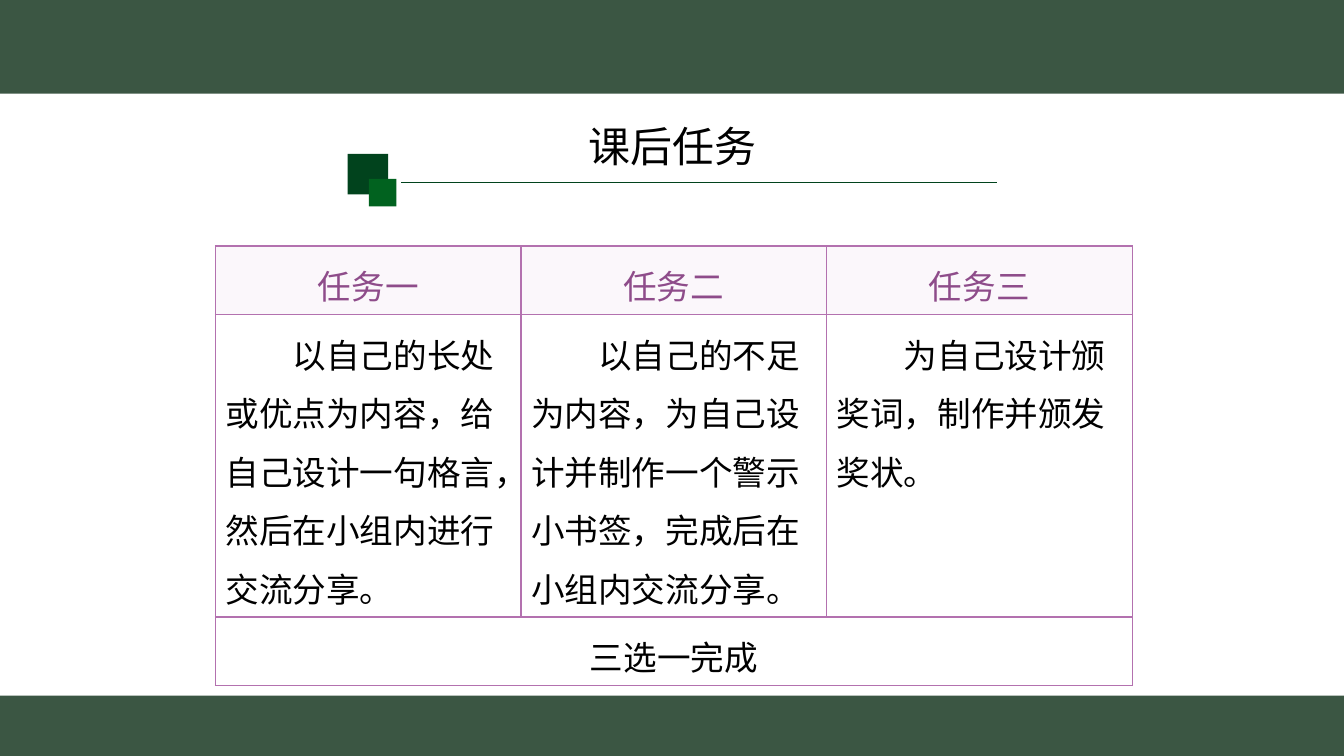
from collections import namedtuple

from lxml import etree
from pptx import Presentation
from pptx import util as u
from pptx.dml.color import RGBColor
from pptx.enum import shapes, text
from pptx.oxml.ns import qn

Box = namedtuple("Box", "left top width height")  # centimetres

CJK_FONT = "Noto Sans CJK SC"
LATIN_FONT = "Times New Roman"
BAND_GREEN, DARK_GREEN, MID_GREEN = "3B5643", "01431D", "01621F"
BORDER, HEADING, HEADING_FILL = "B371AF", "8E4C8A", "FBF7FB"
BLACK, WHITE = "000000", "FFFFFF"

TASKS = {
    "任务一": "以自己的长处或优点为内容，给自己设计一句格言，然后在小组内进行交流分享。",
    "任务二": "以自己的不足为内容，为自己设计并制作一个警示小书签，完成后在小组内交流分享。",
    "任务三": "为自己设计颁奖词，制作并颁发奖状。",
}
FOOTER = "三选一完成"


def color(hex_value):
    return RGBColor.from_string(hex_value)


def lengths(box):
    return [u.Cm(value) for value in box]


def style_para(para, size, latin, hex_value, align, spacing):
    para.alignment = align
    para.line_spacing = spacing
    font = para.font
    font.size = u.Pt(size)
    font.bold = False
    font.name = latin
    font.color.rgb = color(hex_value)
    # East Asian typeface follows the Latin one
    latin_node = para._p.pPr.find(qn("a:defRPr")).find(qn("a:latin"))
    east_asian = etree.Element(qn("a:ea"), typeface=CJK_FONT)
    latin_node.addnext(east_asian)


def add_block(page, box, hex_value):
    block = page.shapes.add_shape(shapes.MSO_SHAPE.RECTANGLE, *lengths(box))
    block.shadow.inherit = False
    block.fill.solid()
    block.fill.fore_color.rgb = color(hex_value)
    block.line.fill.background()


def add_bands(page, box):
    # Green bands along the top and bottom edges
    top_height, bottom_height = 2.36, 1.52
    add_block(page, Box(box.left, box.top, box.width, top_height), BAND_GREEN)
    bottom = box.top + box.height - bottom_height
    add_block(page, Box(box.left, bottom, box.width, bottom_height), BAND_GREEN)


def add_heading(page, box):
    # Overlapping squares
    add_block(page, Box(box.left + 3.22, box.top + 0.7, 1.02, 1.02), DARK_GREEN)
    add_block(page, Box(box.left + 3.76, box.top + 1.33, 0.69, 0.69), MID_GREEN)

    # Underline
    start, end, level = box.left + 4.57, box.left + 19.58, box.top + 1.42
    rule = page.shapes.add_connector(
        shapes.MSO_CONNECTOR.STRAIGHT, *lengths((start, level, end, level)))
    rule.line.color.rgb = color(DARK_GREEN)
    rule.line.width = u.Pt(1)
    etree.SubElement(rule._element.spPr, qn("a:effectLst"))

    # Title
    title = page.shapes.title
    title.left, title.top, title.width, title.height = lengths(box)
    frame = title.text_frame
    frame.text = "课后任务"
    frame.word_wrap = True
    frame.auto_size = text.MSO_AUTO_SIZE.NONE
    frame.vertical_anchor = text.MSO_ANCHOR.TOP
    frame.margin_top = frame.margin_bottom = 0
    style_para(frame.paragraphs[0], 30, CJK_FONT, BLACK, text.PP_ALIGN.CENTER, 0.9)


def set_borders(cell):
    properties = cell._tc.get_or_add_tcPr()
    for position, side in enumerate(("lnL", "lnR", "lnT", "lnB")):
        line = etree.Element(qn(f"a:{side}"), w=str(u.Pt(1)))
        fill = etree.SubElement(line, qn("a:solidFill"))
        etree.SubElement(fill, qn("a:srgbClr"), val=BORDER)
        properties.insert(position, line)


def fill_cell(cell, words, hex_value, centered):
    cell.text = words
    para = cell.text_frame.paragraphs[0]
    align = text.PP_ALIGN.CENTER if centered else text.PP_ALIGN.LEFT
    style_para(para, 24, LATIN_FONT, hex_value, align, 1.2)
    if centered:
        cell.vertical_anchor = text.MSO_ANCHOR.MIDDLE
    else:
        # First line indented by two characters
        para._p.pPr.set("marL", "0")
        para._p.pPr.set("indent", str(u.Pt(48)))


def add_task_table(page, box):
    edge_height = 1.72
    row_heights = (edge_height, box.height - 2 * edge_height, edge_height)
    table = page.shapes.add_table(3, len(TASKS), *lengths(box)).table
    table.first_row = table.horz_banding = False
    for row, height in zip(table.rows, row_heights):
        row.height = u.Cm(height)
    for column in table.columns:
        column.width = u.Cm(box.width / len(TASKS))

    # Fills and borders
    for row_index, row in enumerate(table.rows):
        for cell in row.cells:
            cell.fill.solid()
            cell.fill.fore_color.rgb = color(WHITE if row_index else HEADING_FILL)
            set_borders(cell)

    # Wording
    for index, (name, task) in enumerate(TASKS.items()):
        fill_cell(table.cell(0, index), name, HEADING, True)
        fill_cell(table.cell(1, index), task, BLACK, False)
    footer = table.cell(2, 0)
    footer.merge(table.cell(2, len(TASKS) - 1))
    fill_cell(footer, FOOTER, BLACK, True)


def main():
    deck = Presentation()
    deck.slide_width, deck.slide_height = u.Cm(33.87), u.Cm(19.05)
    page = deck.slides.add_slide(deck.slide_layouts.get_by_name("Title Only"))
    add_bands(page, Box(0, 0, 33.87, 19.05))
    add_heading(page, Box(5.54, 3.18, 22.81, 1.6))
    add_task_table(page, Box(5.43, 6.2, 23.1, 11.06))
    deck.save("out.pptx")


if __name__ == "__main__":
    main()
